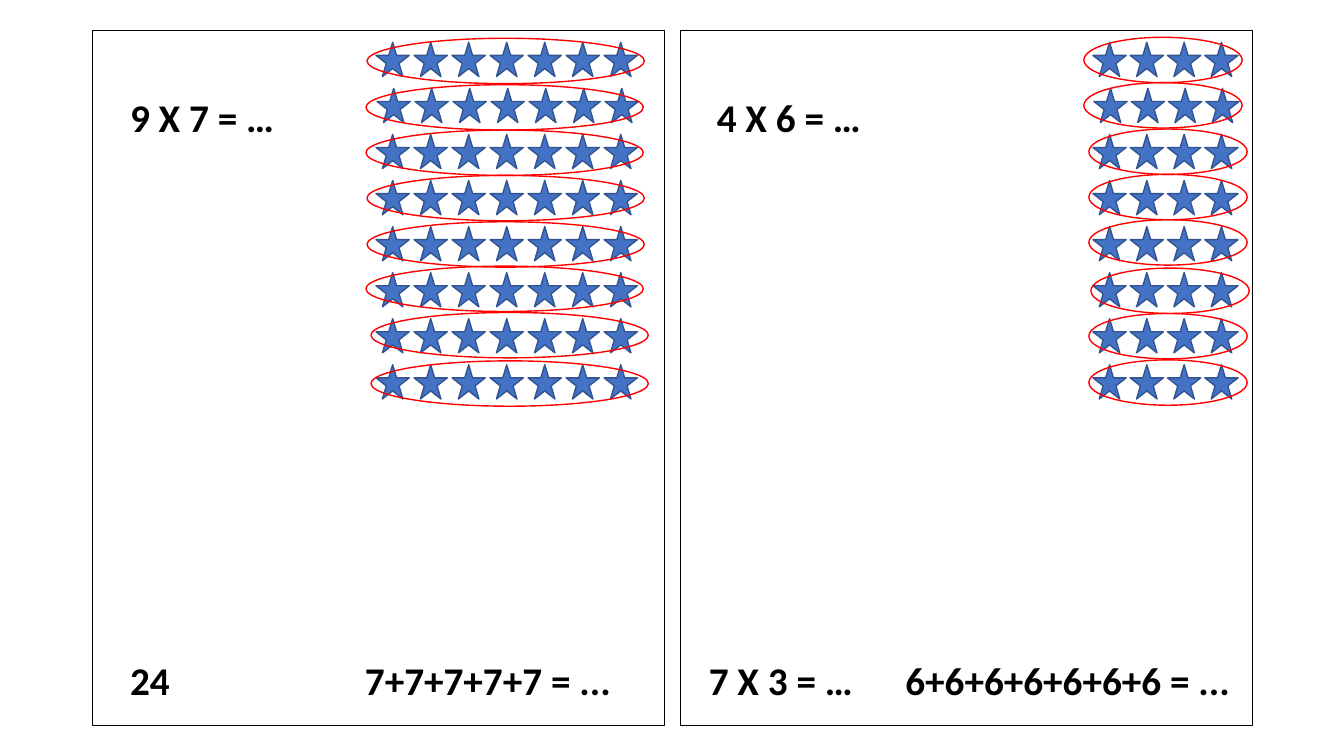
from pptx import Presentation
from pptx.dml.color import RGBColor
from pptx.enum import shapes, text
from pptx.oxml import ns, xmlchemy
from pptx.util import Inches, Pt

BLACK = RGBColor(0x00, 0x00, 0x00)
BLUE = RGBColor(0x44, 0x72, 0xC4)
DARK_BLUE = RGBColor(0x32, 0x54, 0x91)
RED = RGBColor(0xFF, 0x00, 0x00)

ROW_COUNT = 8
FIRST_ROW_TOP, ROW_PITCH = 0.42, 0.457
LEFT_RINGS = [(3.64, 0.38), (3.63, 0.84), (3.63, 1.29), (3.64, 1.74),
              (3.64, 2.2), (3.63, 2.64), (3.68, 3.1), (3.68, 3.58)]
RIGHT_RINGS = [(10.75, 0.37), (10.75, 0.82), (10.8, 1.28), (10.8, 1.73),
               (10.8, 2.18), (10.82, 2.66), (10.8, 3.11), (10.8, 3.57)]


def add_outline(slide, preset, left, top, width, height, color, weight, fill=None):
    outline = slide.shapes.add_shape(
        preset, Inches(left), Inches(top), Inches(width), Inches(height))
    outline.shadow.inherit = False
    if fill is None:
        outline.fill.background()
    else:
        outline.fill.solid()
        outline.fill.fore_color.rgb = fill
    outline.line.color.rgb = color
    outline.line.width = Pt(weight)
    return outline


def add_tab(paragraph, position):
    properties = paragraph._p.get_or_add_pPr()
    stops = xmlchemy.OxmlElement("a:tabLst")
    stop = xmlchemy.OxmlElement("a:tab")
    stop.set("pos", str(Inches(position)))
    stop.set("algn", "l")
    stops.append(stop)
    properties.append(stops)


def style_line(paragraph):
    paragraph.alignment = text.PP_ALIGN.LEFT
    paragraph.line_spacing = 0.9
    paragraph.font.name = "Calibri"
    paragraph.font.size = Pt(28)
    paragraph.font.bold = True
    paragraph.font.color.rgb = BLACK


def add_card(slide, left, inset, product, indent, bottom_line, sum_tab):
    card = add_outline(slide, shapes.MSO_SHAPE.RECTANGLE, left, 0.3, 5.67, 6.9, BLACK, 0.75)
    frame = card.text_frame
    frame.word_wrap = True
    frame.vertical_anchor = text.MSO_ANCHOR.TOP
    frame.margin_left = Inches(inset)
    frame.margin_right = Inches(0.1)
    frame.margin_top = Inches(0.68)

    question = frame.paragraphs[0]
    question.text = product
    question._p.get_or_add_pPr().set("marL", str(Inches(indent)))
    style_line(question)

    answers = frame.add_paragraph()
    answers.text = bottom_line
    add_tab(answers, sum_tab)
    answers.space_before = Pt(371.5)
    style_line(answers)


def add_star_rows(slide, left, pitch, columns, rings, ring_width):
    for row, (ring_left, ring_top) in enumerate(rings):
        top = FIRST_ROW_TOP + row * ROW_PITCH
        shift = 0.01 if row == 1 else 0
        for column in range(columns):
            add_outline(slide, shapes.MSO_SHAPE.STAR_5_POINT,
                        left + shift + column * pitch, top, 0.33, 0.34,
                        DARK_BLUE, 1, BLUE)
        add_outline(slide, shapes.MSO_SHAPE.OVAL, ring_left, ring_top,
                    ring_width, 0.45, RED, 1)


def main():
    deck = Presentation()
    deck.slide_width = Inches(13.33)
    deck.slide_height = Inches(7.5)
    slide = deck.slides.add_slide(deck.slide_layouts[6])

    add_card(slide, 0.92, 0.37, "9 X 7 = …", 0, "24\t7+7+7+7+7 = ...", 2.33)
    add_card(slide, 6.75, 0.28, "4 X 6 = …", 0.08,
             "7 X 3 = …\t6+6+6+6+6+6+6 = ...", 1.95)
    add_star_rows(slide, 10.84, 0.37, 4, RIGHT_RINGS, 1.57)
    add_star_rows(slide, 3.73, 0.377, 7, LEFT_RINGS, 2.75)

    deck.save("out.pptx")


if __name__ == "__main__":
    main()
